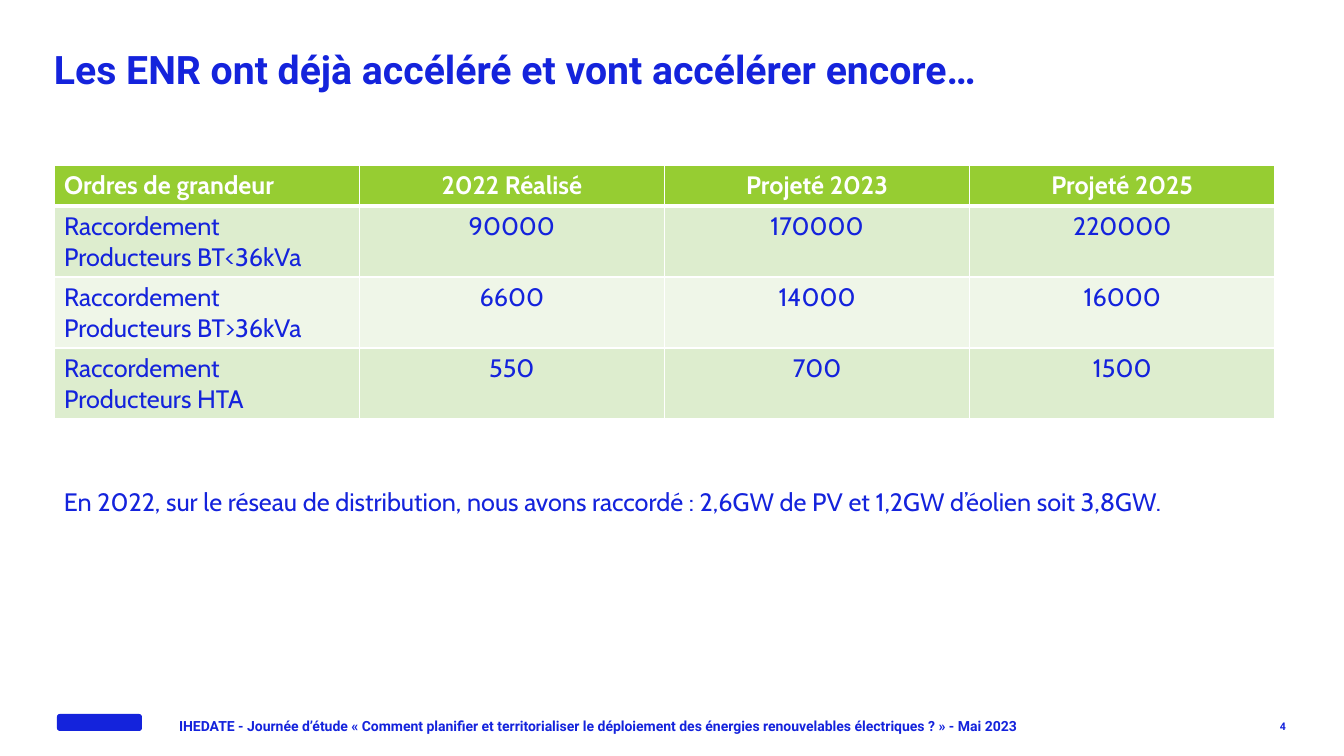
from lxml.etree import SubElement
from pptx import Presentation
from pptx.dml.color import RGBColor
from pptx.enum.shapes import MSO_SHAPE
from pptx.enum.text import MSO_ANCHOR, PP_ALIGN
from pptx.oxml.ns import qn
from pptx.util import Pt

PX = 914400 / 100.8
COLORS = {"blue": "1423DC", "green": "96CD32", "white": "FFFFFF",
          "band_dark": "DDEDCE", "band_light": "EFF6E8"}


def px(*lengths):
    """Turn pixel lengths into a list of EMU."""
    return [round(n * PX) for n in lengths]


def write(tf, text, size, font, color="blue", bold=False, align=PP_ALIGN.LEFT):
    p = tf.paragraphs[0]
    p.alignment = align
    r = p.add_run()
    r.text = text
    formats = {"size": Pt(size), "name": font, "bold": bold}
    for key, value in formats.items():
        setattr(r.font, key, value)
    r.font.color.rgb = RGBColor.from_string(COLORS[color])


prs = Presentation()
prs.slide_width, prs.slide_height = px(1344, 756)
s = prs.slides.add_slide(prs.slide_layouts[6])

# Plain block in the logo's place
sp = s.shapes.add_shape(MSO_SHAPE.ROUNDED_RECTANGLE, *px(57, 714, 85, 17))
sp.shadow.inherit = False
sp.fill.solid()
sp.fill.fore_color.rgb = RGBColor.from_string(COLORS["blue"])
sp.line.fill.background()

# Text boxes: box, inset, anchor, line spacing, text format
TOP, MIDDLE = MSO_ANCHOR.TOP, MSO_ANCHOR.MIDDLE
texts = [
    ((54, 53, 1232, 40), False, TOP, 0.84,
     {"text": "Les ENR ont déjà accéléré et vont accélérer encore…",
      "size": 28, "font": "Roboto", "bold": True}),
    ((54, 481, 1221, 72), True, TOP, 1.0,
     {"text": "En 2022, sur le réseau de distribution, nous avons raccordé : "
              "2,6GW de PV et 1,2GW d’éolien soit 3,8GW.",
      "size": 18, "font": "Cabin"}),
    ((179, 713, 927, 25), False, MIDDLE, 1.0,
     {"text": "IHEDATE - Journée d’étude « Comment planifier et territorialiser le "
              "déploiement des énergies renouvelables électriques ? » - Mai 2023",
      "size": 10, "font": "Roboto", "bold": True}),
    ((1235, 718, 51, 17), False, MIDDLE, 1.0,
     {"text": "4", "size": 7.5, "font": "Roboto", "bold": True,
      "align": PP_ALIGN.RIGHT}),
]
for box, inset, anchor, spacing, text_format in texts:
    tf = s.shapes.add_textbox(*px(*box)).text_frame
    tf.word_wrap = True
    tf.vertical_anchor = anchor
    if not inset:
        tf.margin_left = tf.margin_top = tf.margin_right = tf.margin_bottom = 0
    write(tf, **text_format)
    tf.paragraphs[0].line_spacing = spacing

# Table of grid connections
rows = [
    ("Ordres de grandeur", "2022 Réalisé", "Projeté 2023", "Projeté 2025"),
    ("Raccordement Producteurs BT<36kVa", "90000", "170000", "220000"),
    ("Raccordement Producteurs BT>36kVa", "6600", "14000", "16000"),
    ("Raccordement Producteurs HTA", "550", "700", "1500"),
]
fills = ["green", "band_dark", "band_light", "band_dark"]
HEADER_H, ROW_H = 41, 71
table = s.shapes.add_table(len(rows), len(rows[0]),
                           *px(54, 165, 1221, HEADER_H + 3 * ROW_H)).table
for i, row in enumerate(rows):
    header = i == 0
    table.rows[i].height = px(HEADER_H if header else ROW_H)[0]
    for j, text in enumerate(row):
        cell = table.cell(i, j)
        write(cell.text_frame, text, 18, "Cabin",
              color="white" if header else "blue", bold=header,
              align=PP_ALIGN.CENTER if j else PP_ALIGN.LEFT)
        tcPr = cell._tc.get_or_add_tcPr()
        widths = {"a:lnL": 1, "a:lnR": 1, "a:lnT": 3 if i == 1 else 1,
                  "a:lnB": 3 if header else 1}
        for tag, width in widths.items():
            ln = SubElement(tcPr, qn(tag), w=str(Pt(width)))
            fill = SubElement(ln, qn("a:solidFill"))
            SubElement(fill, qn("a:srgbClr"), val=COLORS["white"])
        cell.fill.solid()
        cell.fill.fore_color.rgb = RGBColor.from_string(COLORS[fills[i]])

prs.save("out.pptx")
